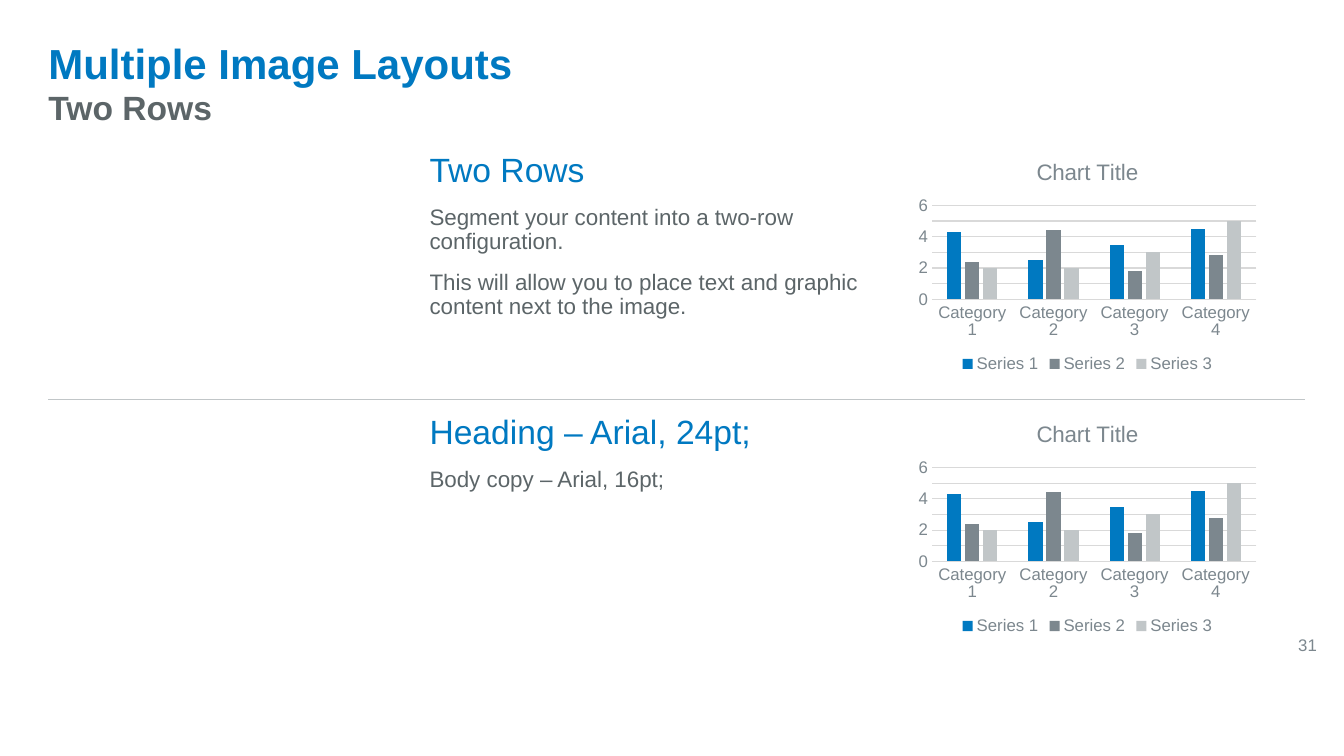
from dataclasses import dataclass

from lxml.etree import SubElement
from pptx import Presentation
from pptx.chart.data import CategoryChartData
from pptx.dml.color import RGBColor
from pptx.enum.chart import XL_CHART_TYPE, XL_LEGEND_POSITION, XL_TICK_MARK
from pptx.enum.shapes import MSO_CONNECTOR
from pptx.enum.text import MSO_ANCHOR, MSO_AUTO_SIZE, PP_ALIGN
from pptx.oxml.ns import qn
from pptx.util import Pt

PX = 9144


@dataclass(frozen=True)
class Theme:
    font: str = "Arial"
    blue: str = "0079C1"
    dark: str = "5C6568"
    gray: str = "7C878E"
    silver: str = "C1C6C8"
    grid: str = "D9D9D9"
    title_size: int = 30
    heading_size: int = 24
    body_size: int = 16
    label_size: int = 12


def assign(target, values):
    for name, value in values.items():
        setattr(target, name, value)


class SlideBuilder:
    def __init__(self, slide, theme):
        self.slide = slide
        self.theme = theme

    def font(self, font, size, color, bold=False):
        assign(font, {"name": self.theme.font, "size": Pt(size), "bold": bold})
        font.color.rgb = RGBColor.from_string(color)

    def outline(self, line, color, width):
        line.color.rgb = RGBColor.from_string(color)
        line.width = Pt(width)

    def frame(self, shape, box, paragraphs, inset=(10, 5), anchor=MSO_ANCHOR.MIDDLE,
              spacing=None, after=0, align=PP_ALIGN.LEFT):
        assign(shape, dict(zip(("left", "top", "width", "height"), (v * PX for v in box))))
        across, down = (v * PX for v in inset)
        frame = shape.text_frame
        assign(frame, {
            "word_wrap": True, "auto_size": MSO_AUTO_SIZE.NONE, "vertical_anchor": anchor,
            "margin_left": across, "margin_right": across,
            "margin_top": down, "margin_bottom": down,
        })
        for index, (text, size, color, bold) in enumerate(paragraphs):
            paragraph = frame.paragraphs[0] if index == 0 else frame.add_paragraph()
            properties = paragraph._p.get_or_add_pPr()
            properties.set("marL", "0")
            properties.set("indent", "0")
            SubElement(properties, qn("a:buNone"))
            assign(paragraph, {"alignment": align, "line_spacing": spacing,
                               "space_before": Pt(0), "space_after": Pt(after)})
            run = paragraph.add_run()
            run.text = text
            self.font(run.font, size, color, bold)

    def heading(self, placeholder, box, text, size, color):
        self.frame(placeholder, box, [(text, size, color, True)], spacing=0.9)

    def body(self, placeholder, box, heading, copy):
        theme = self.theme
        paragraphs = [(heading, theme.heading_size, theme.blue, False)]
        paragraphs += [(text, theme.body_size, theme.dark, False) for text in copy]
        self.frame(placeholder, box, paragraphs, inset=(0, 0),
                   anchor=MSO_ANCHOR.TOP, spacing=0.9, after=12)

    def page_number(self, box, number):
        label = self.slide.shapes.add_textbox(*(v * PX for v in box))
        self.frame(label, box, [(number, self.theme.label_size, self.theme.gray, False)],
                   align=PP_ALIGN.RIGHT)

    def divider(self, left, right, y):
        rule = self.slide.shapes.add_connector(
            MSO_CONNECTOR.STRAIGHT, left * PX, y * PX, right * PX, y * PX)
        self.outline(rule.line, self.theme.silver, 0.5)
        SubElement(rule._element.spPr, qn("a:effectLst"))

    def column_chart(self, box, title, categories, series):
        theme = self.theme
        data = CategoryChartData()
        data.categories = categories
        for name, values in series.items():
            data.add_series(name, values)
        chart = self.slide.shapes.add_chart(
            XL_CHART_TYPE.COLUMN_CLUSTERED, *(v * PX for v in box), data).chart
        self.font(chart.font, theme.label_size, theme.gray)
        assign(chart, {"has_title": True, "has_legend": True})
        chart.chart_title.include_in_layout = False
        heading = chart.chart_title.text_frame.paragraphs[0].add_run()
        heading.text = title
        self.font(heading.font, theme.body_size, theme.gray)
        assign(chart.legend, {"position": XL_LEGEND_POSITION.BOTTOM,
                              "include_in_layout": False})
        plot = chart.plots[0]
        assign(plot, {"gap_width": 219, "overlap": -27, "vary_by_categories": False})
        for bars, color in zip(plot.series, (theme.blue, theme.gray, theme.silver)):
            bars.format.fill.solid()
            bars.format.fill.fore_color.rgb = RGBColor.from_string(color)
        for axis in (chart.category_axis, chart.value_axis):
            assign(axis, {"major_tick_mark": XL_TICK_MARK.NONE,
                          "minor_tick_mark": XL_TICK_MARK.NONE})
            self.font(axis.tick_labels.font, theme.label_size, theme.gray)
        self.outline(chart.category_axis.format.line, theme.grid, 0.75)
        assign(chart.value_axis, {"minimum_scale": 0, "maximum_scale": 6, "major_unit": 1,
                                  "has_major_gridlines": True})
        chart.value_axis.format.line.fill.background()
        self.outline(chart.value_axis.major_gridlines.format.line, theme.grid, 0.75)


ROWS = [
    ("Two Rows", ["Segment your content into a two-row configuration.",
                  "This will allow you to place text and graphic content next to the image."]),
    ("Heading – Arial, 24pt;", ["Body copy – Arial, 16pt;"]),
]
CATEGORIES = [f"Category {number}" for number in range(1, 5)]
SERIES = {
    "Series 1": (4.3, 2.5, 3.5, 4.5),
    "Series 2": (2.4, 4.4, 1.8, 2.8),
    "Series 3": (2, 2, 3, 5),
}
ROW_PITCH = 260


def main():
    presentation = Presentation()
    assign(presentation, {"slide_width": 1333 * PX, "slide_height": 750 * PX})
    slide = presentation.slides.add_slide(presentation.slide_layouts[4])
    theme = Theme()
    builder = SlideBuilder(slide, theme)
    title, subtitle, upper, lower, spare = slide.placeholders
    spare._element.getparent().remove(spare._element)

    builder.divider(48, 1294, 396)
    builder.heading(title, (38, 30, 1295, 70), "Multiple Image Layouts",
                    theme.title_size, theme.blue)
    builder.heading(subtitle, (38, 84, 1295, 49), "Two Rows",
                    theme.heading_size, theme.dark)
    builder.page_number((1166, 620, 150, 40), "31")
    for index, (placeholder, (heading, copy)) in enumerate(zip((upper, lower), ROWS)):
        offset = index * ROW_PITCH
        builder.body(placeholder, (426, 152 + offset, 447, 230), heading, copy)
        builder.column_chart((904, 143 + offset, 349, 231), "Chart Title", CATEGORIES, SERIES)
    presentation.save("out.pptx")


if __name__ == "__main__":
    main()
